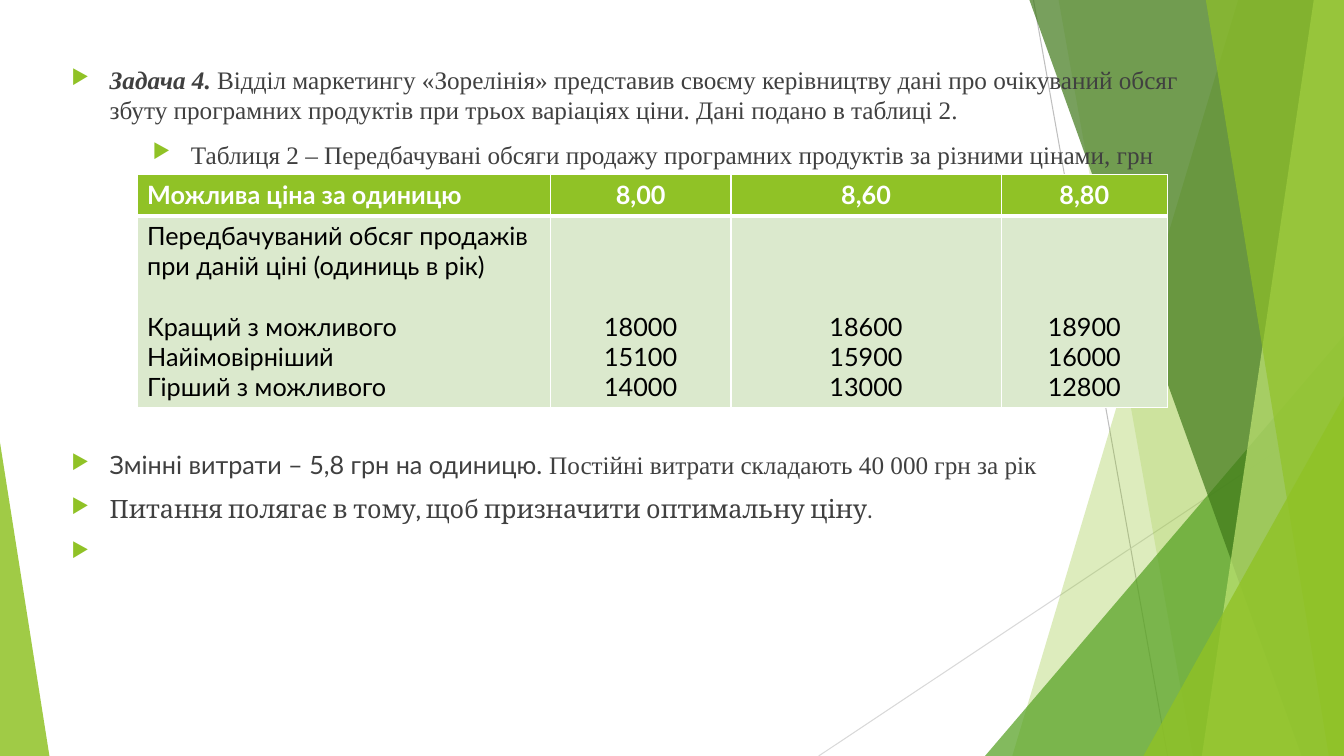
from lxml import etree
from pptx import Presentation
from pptx.dml.color import RGBColor
from pptx.enum.shapes import MSO_CONNECTOR, MSO_SHAPE
from pptx.enum.text import MSO_ANCHOR, PP_ALIGN
from pptx.oxml.ns import qn
from pptx.util import Inches, Pt

LEFT, CENTER, JUSTIFY = PP_ALIGN.LEFT, PP_ALIGN.CENTER, PP_ALIGN.JUSTIFY
STRAIGHT = MSO_CONNECTOR.STRAIGHT
TRIANGLE = MSO_SHAPE.ISOSCELES_TRIANGLE

WIDTH, HEIGHT = 13.33, 7.5
TEXT_SIZE = 18
LINE_HEIGHT = 21.6
SERIF, SANS, CAMBRIA = "Times New Roman", "Lato", "Cambria"
COLORS = {
    "lime": "90C226", "green": "54A021", "forest": "3F7819", "pale": "C0E474",
    "mint": "DBE9CD", "text": "404040", "black": "000000", "white": "FFFFFF",
    "gray": "BFBFBF", "light gray": "D9D9D9",
}

# Paragraphs: alignment, then runs of (text, font, bold italic)
TASK = [
    (LEFT, [
        ("Задача 4. ", SERIF, True),
        ("Відділ маркетингу «Зорелінія» представив своєму керівництву дані про "
         "очікуваний обсяг збуту програмних продуктів при трьох варіаціях ціни. "
         "Дані подано в таблиці 2.", SERIF, False),
    ]),
    (CENTER, [("Таблиця 2 – Передбачувані обсяги продажу програмних продуктів "
               "за різними цінами, грн", SERIF, False)]),
]
QUESTION = [
    (JUSTIFY, [("Змінні витрати – 5,8 грн на одиницю. ", SANS, False),
               ("Постійні витрати складають 40 000 грн за рік", SERIF, False)]),
    (JUSTIFY, [("Питання полягає в тому, щоб призначити оптимальну ціну.",
                CAMBRIA, False)]),
    (JUSTIFY, [(" ", SANS, False)]),
]
TEXT_BLOCKS = [(0.59, 1.1, TASK), (4.41, 1.4, QUESTION)]  # top, height, content

HEADER = ["Можлива ціна за одиницю", "8,00", "8,60", "8,80"]
VOLUME_LABEL = "Передбачуваний обсяг продажів при даній ціні (одиниць в рік)"
SCENARIOS = [
    ("Кращий з можливого", "18000", "18600", "18900"),
    ("Найімовірніший", "15100", "15900", "16000"),
    ("Гірший з можливого", "14000", "13000", "12800"),
]
COLUMN_WIDTHS = [4.1, 1.79, 2.68, 1.65]
ROW_HEIGHTS = [0.41, 1.9]

THIN_LINES = [  # start, end, color
    ((10.25, 0), (11.58, HEIGHT), "gray"),
    ((WIDTH, 4.03), (8.12, HEIGHT), "light gray"),
]
# Facets from back to front. A sheet runs from a slanted left side to the right
# edge: (top x, bottom x). A corner is a right triangle: (left, top, width, apex).
FACETS = [
    ("sheet", (12.28, 10.04), "lime", 30),
    ("sheet", (10.5, 11.83), "lime", 20),
    ("corner", (9.77, 3.33, 3.56, 1), "green", 72),
    ("sheet", (10.21, 12.91), "forest", 70),
    ("sheet", (13.03, 11.92), "pale", 70),
    ("sheet", (11.96, 13.18), "lime", 65),
    ("corner", (11.34, 3.93, 1.99, 1), "lime", 80),
    ("corner", (0, 4.39, 0.49, 0), "lime", 85),
]


def rgb(name):
    return RGBColor.from_string(COLORS[name])


def add_thin_line(slide, start, end, color):
    line = slide.shapes.add_connector(
        STRAIGHT, *[Inches(value) for value in (*start, *end)])
    line.line.color.rgb = rgb(color)
    line.line.width = Pt(0.75)
    etree.SubElement(line._element.spPr, qn("a:effectLst"))


def add_facet(slide, kind, geometry, color, opacity):
    if kind == "sheet":
        top_x, bottom_x = geometry
        corners = [(top_x, 0), (WIDTH, 0), (WIDTH, HEIGHT), (bottom_x, HEIGHT)]
        points = [(Inches(x), Inches(y)) for x, y in corners]
        builder = slide.shapes.build_freeform(*points[0])
        builder.add_line_segments(points[1:], close=True)
        shape = builder.convert_to_shape()
    else:
        left, top, width, apex = geometry
        box = (left, top, width, HEIGHT - top)
        shape = slide.shapes.add_shape(TRIANGLE, *[Inches(value) for value in box])
        shape.adjustments[0] = apex
    shape.shadow.inherit = False
    shape.line.fill.background()
    shape.fill.solid()
    shape.fill.fore_color.rgb = rgb(color)
    color_element = shape._element.spPr.find(f".//{qn('a:srgbClr')}")
    etree.SubElement(color_element, qn("a:alpha"), val=str(opacity * 1000))


def add_bullet(paragraph):
    properties = paragraph._p.get_or_add_pPr()
    properties.set("marL", str(Inches(0.38)))
    properties.set("indent", str(-Inches(0.38)))
    bullet_color = etree.SubElement(properties, qn("a:buClr"))
    etree.SubElement(bullet_color, qn("a:srgbClr"), val=COLORS["lime"])
    etree.SubElement(properties, qn("a:buSzPct"), val="80000")
    etree.SubElement(properties, qn("a:buChar"), char="▶")


def add_text_block(slide, top, height, content):
    box = slide.shapes.add_textbox(
        Inches(0.61), Inches(top), Inches(11.74), Inches(height))
    frame = box.text_frame
    frame.word_wrap = True
    for index, (alignment, runs) in enumerate(content):
        paragraph = frame.add_paragraph() if index else frame.paragraphs[0]
        paragraph.alignment = alignment
        if index:
            paragraph.space_before = Pt(10)
        add_bullet(paragraph)
        paragraph.font.size = Pt(TEXT_SIZE)
        paragraph.font.color.rgb = rgb("text")
        for text, font, emphasis in runs:
            run = paragraph.add_run()
            run.text = text
            run.font.name = font
            run.font.bold = run.font.italic = emphasis


def set_borders(cell, bottom_width):
    properties = cell._tc.get_or_add_tcPr()
    for side, width in (("L", 1), ("R", 1), ("T", 1), ("B", bottom_width)):
        border = etree.SubElement(properties, qn(f"a:ln{side}"), w=str(Pt(width)))
        fill = etree.SubElement(border, qn("a:solidFill"))
        etree.SubElement(fill, qn("a:srgbClr"), val=COLORS["white"])


def fill_cell(cell, lines, is_header, is_label):
    set_borders(cell, 3 if is_header else 1)
    cell.fill.solid()
    cell.fill.fore_color.rgb = rgb("lime" if is_header else "mint")
    if not is_header and not is_label:
        cell.vertical_anchor = MSO_ANCHOR.BOTTOM
    cell.text_frame.text = "\n".join(lines)
    for index, paragraph in enumerate(cell.text_frame.paragraphs):
        paragraph.alignment = LEFT if is_label else CENTER
        if is_label and index == 1:
            paragraph.space_before = Pt(LINE_HEIGHT)
        paragraph.font.name = SANS
        paragraph.font.size = Pt(TEXT_SIZE)
        paragraph.font.bold = is_header
        paragraph.font.color.rgb = rgb("white" if is_header else "black")


def add_price_table(slide):
    frame = slide.shapes.add_table(
        len(ROW_HEIGHTS), len(COLUMN_WIDTHS), Inches(1.36), Inches(1.73),
        Inches(sum(COLUMN_WIDTHS)), Inches(sum(ROW_HEIGHTS)))
    table = frame.table
    for row, height in zip(table.rows, ROW_HEIGHTS):
        row.height = Inches(height)
    labels, *volumes = zip(*SCENARIOS)
    body = [(VOLUME_LABEL, *labels), *volumes]
    for index, width in enumerate(COLUMN_WIDTHS):
        table.columns[index].width = Inches(width)
        fill_cell(table.cell(0, index), [HEADER[index]], True, index == 0)
        fill_cell(table.cell(1, index), body[index], False, index == 0)


def main():
    presentation = Presentation()
    presentation.slide_width = Inches(WIDTH)
    presentation.slide_height = Inches(HEIGHT)
    slide = presentation.slides.add_slide(presentation.slide_layouts[6])
    for thin_line in THIN_LINES:
        add_thin_line(slide, *thin_line)
    for facet in FACETS:
        add_facet(slide, *facet)
    for block in TEXT_BLOCKS:
        add_text_block(slide, *block)
    add_price_table(slide)
    presentation.save("out.pptx")


if __name__ == "__main__":
    main()
